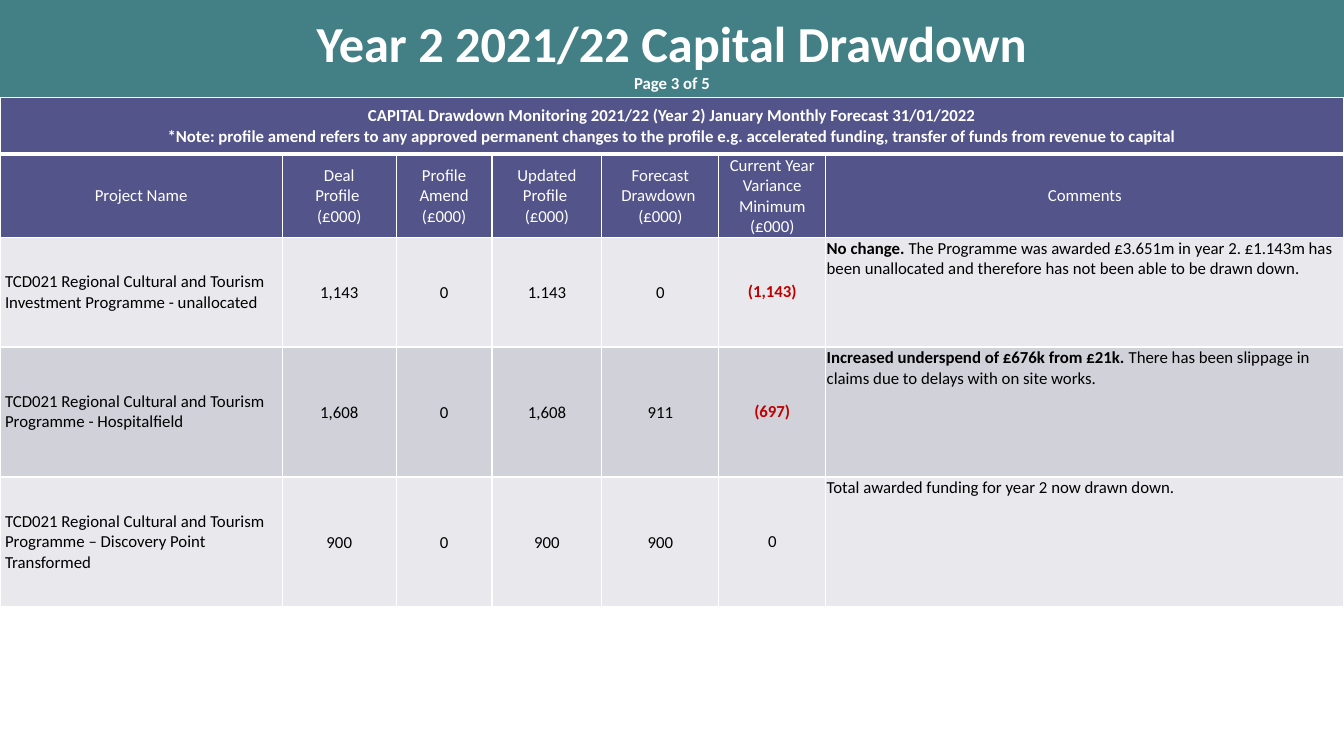
"""Build the Year 2 capital drawdown slide."""
from dataclasses import dataclass

from lxml.etree import SubElement
from pptx import Presentation
from pptx.dml.color import RGBColor as Rgb
from pptx.enum.text import MSO_ANCHOR as Anchor, MSO_AUTO_SIZE as Auto, PP_ALIGN as Align
from pptx.oxml.ns import qn
from pptx.util import Inches, Pt


@dataclass(frozen=True)
class Theme:
    font: str = "Calibri"
    teal: str = "438086"
    navy: str = "53548A"
    pale: str = "E9E9ED"
    grey: str = "D1D1DA"
    white: str = "FFFFFF"
    black: str = "000000"
    red: str = "C00000"
    big: int = 36
    small: int = 12
    thin: int = 1
    thick: int = 3


@dataclass(frozen=True)
class Entry:
    text: str
    lead: str = ""
    fill: str = ""
    color: str = ""
    bold: bool = False
    align: Align = Align.CENTER
    anchor: Anchor = Anchor.MIDDLE
    pad: float = 0.01


@dataclass(frozen=True)
class Project:
    name: str
    sums: tuple[str, ...]
    gap: str
    lead: str
    note: str


LOOK = Theme()
WIDTHS = (2.8, 1.13, 0.95, 1.09, 1.16, 1.06, 5.14)
HEIGHTS = (0.56, 0.72, 1.09, 1.29, 1.29)
BANNER = (
    "CAPITAL Drawdown Monitoring 2021/22 (Year 2) January Monthly Forecast 31/01/2022\n"
    "*Note: profile amend refers to any approved permanent changes to the profile "
    "e.g. accelerated funding, transfer of funds from revenue to capital"
)
HEADS = (
    "Project Name",
    "Deal\nProfile \n(£000)",
    "Profile\nAmend\n(£000)",
    "Updated\nProfile \n(£000)",
    "Forecast\nDrawdown \n(£000)",
    "Current Year Variance Minimum\n(£000)",
    "Comments",
)
PROJECTS = (
    Project(
        "TCD021 Regional Cultural and Tourism Investment Programme - unallocated",
        ("1,143", "0", "1.143", "0"), "(1,143)", "No change. ",
        "The Programme was awarded £3.651m in year 2. £1.143m has been unallocated "
        "and therefore has not been able to be drawn down.",
    ),
    Project(
        "TCD021 Regional Cultural and Tourism Programme - Hospitalfield",
        ("1,608", "0", "1,608", "911"), "(697)", "Increased underspend of £676k from £21k. ",
        "There has been slippage in claims due to delays with on site works.",
    ),
    Project(
        "TCD021 Regional Cultural and Tourism Programme – Discovery Point Transformed",
        ("900", "0", "900", "900"), "0", "",
        "Total awarded funding for year 2 now drawn down.",
    ),
)


def style(run, size: int, color: str, bold: bool) -> None:
    font = run.font
    font.name, font.size, font.bold = LOOK.font, Pt(size), bold
    font.color.rgb = Rgb.from_string(color)


def paint(fill, color: str) -> None:
    fill.solid()
    fill.fore_color.rgb = Rgb.from_string(color)


def edge(cell, top: int, base: int) -> None:
    props = cell._tc.get_or_add_tcPr()
    for side, width in (("L", LOOK.thin), ("R", LOOK.thin), ("T", top), ("B", base)):
        line = SubElement(props, qn(f"a:ln{side}"), w=str(Pt(width)))
        SubElement(SubElement(line, qn("a:solidFill")), qn("a:srgbClr"), val=LOOK.white)


def write(cell, entry: Entry) -> None:
    paint(cell.fill, entry.fill)
    cell.vertical_anchor = entry.anchor
    cell.margin_left = cell.margin_right = cell.margin_top = Inches(entry.pad)
    cell.margin_bottom = Inches(entry.pad if entry.pad > 0.01 else 0)
    frame = cell.text_frame
    frame.text = entry.lead or entry.text
    for para in frame.paragraphs:
        para.alignment = entry.align
        for run in para.runs:
            style(run, LOOK.small, entry.color, entry.bold or bool(entry.lead))
    if entry.lead:
        run = frame.paragraphs[0].add_run()
        run.text = entry.text
        style(run, LOOK.small, entry.color, entry.bold)


def head(text: str, bold: bool = False) -> Entry:
    return Entry(text, fill=LOOK.navy, color=LOOK.white, bold=bold)


def line_up(item: Project, fill: str) -> list[Entry]:
    short = item.gap.startswith("(")
    ink = LOOK.black
    return [
        Entry(item.name, fill=fill, color=ink, align=Align.LEFT, pad=0.05),
        *(Entry(total, fill=fill, color=ink) for total in item.sums),
        Entry(item.gap, fill=fill, color=LOOK.red if short else ink, bold=short, pad=0.05),
        Entry(item.note, item.lead, fill, ink, align=Align.LEFT, anchor=Anchor.TOP),
    ]


def add_title(slide) -> None:
    title = slide.shapes.title
    title.left, title.top = Inches(0), Inches(0)
    title.width, title.height = Inches(13.33), Inches(1.04)
    paint(title.fill, LOOK.teal)
    frame = title.text_frame
    frame.text = "Year 2 2021/22 Capital Drawdown\nPage 3 of 5"
    frame.auto_size, frame.word_wrap = Auto.NONE, True
    frame.vertical_anchor = Anchor.MIDDLE
    for para, size in zip(frame.paragraphs, (LOOK.big, LOOK.small)):
        para.alignment = Align.CENTER
        style(para.runs[0], size, LOOK.white, True)


def add_grid(slide) -> None:
    table = slide.shapes.add_table(
        len(HEIGHTS), len(WIDTHS), Inches(0), Inches(0.97),
        Inches(sum(WIDTHS)), Inches(sum(HEIGHTS)),
    ).table
    table.first_row = table.horz_banding = False
    for col, width in zip(table.columns, WIDTHS):
        col.width = Inches(width)
    for row, height in zip(table.rows, HEIGHTS):
        row.height = Inches(height)
    for index, row in enumerate(table.rows):
        for cell in row.cells:
            edge(cell, LOOK.thick if index == 1 else LOOK.thin,
                 LOOK.thick if index == 0 else LOOK.thin)
    table.cell(0, 0).merge(table.cell(0, len(WIDTHS) - 1))
    rows = [[head(BANNER, True)], [head(text) for text in HEADS]]
    for index, item in enumerate(PROJECTS):
        rows.append(line_up(item, LOOK.grey if index % 2 else LOOK.pale))
    for row, entries in zip(table.rows, rows):
        for cell, entry in zip(row.cells, entries):
            write(cell, entry)


def main() -> None:
    deck = Presentation()
    deck.slide_width, deck.slide_height = Inches(13.33), Inches(7.5)
    slide = deck.slides.add_slide(deck.slide_layouts[5])
    add_title(slide)
    add_grid(slide)
    deck.save("out.pptx")


if __name__ == "__main__":
    main()
